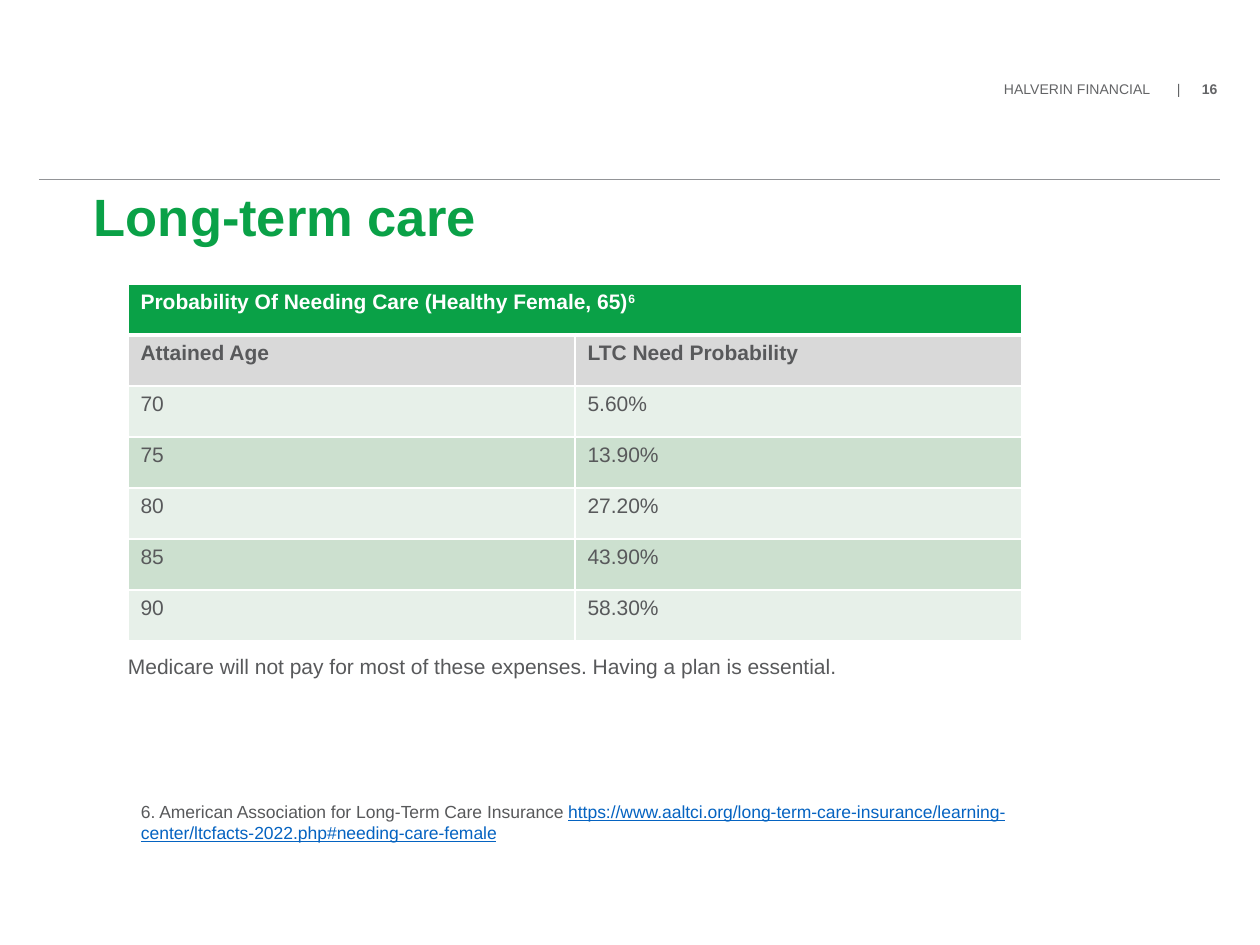
from lxml.etree import SubElement as Sub
from pptx import Presentation as Deck
from pptx.dml.color import RGBColor as RGB
from pptx.enum.shapes import MSO_CONNECTOR as Link
from pptx.oxml.ns import qn
from pptx.util import Emu, Pt

GREEN = RGB(0x0A, 0xA1, 0x47)
MINT = RGB(0xE7, 0xF0, 0xE9)
SAGE = RGB(0xCC, 0xE0, 0xCF)
SILVER = RGB(0xD9, 0xD9, 0xD9)
WHITE = RGB(0xFF, 0xFF, 0xFF)
INK = RGB(0x58, 0x59, 0x5B)
GREY = RGB(0x63, 0x64, 0x66)
RULE = RGB(0x92, 0x94, 0x97)
BLUE = RGB(0x05, 0x63, 0xC1)

ROWS = [
    ("Attained Age", "LTC Need Probability"),
    ("70", "5.60%"),
    ("75", "13.90%"),
    ("80", "27.20%"),
    ("85", "43.90%"),
    ("90", "58.30%"),
]


def px(n):
    """Turn pixels into EMU."""
    return Emu(round(n * 914400 / 126))


def style(par, size, color, bold=False):
    """Set the font of a whole paragraph."""
    font = par.font
    font.name, font.size, font.bold = "Arial", Pt(size), bold
    font.color.rgb = color


def add_text(slide, box, text, size, color, bold=False, pad=(0, 0)):
    """Add a wrapped text box and return its paragraph."""
    frame = slide.shapes.add_textbox(*map(px, box)).text_frame
    frame.word_wrap = True
    frame.margin_left = frame.margin_right = px(pad[0])
    frame.margin_top = frame.margin_bottom = px(pad[1])
    par = frame.paragraphs[0]
    par.text = text
    style(par, size, color, bold)
    return par


def add_head(slide, box):
    """Place the firm name, page number and rule across the top."""
    left, top, width, height = box
    par = add_text(slide, (left + 965, top, width - 965, 19), "", 8, GREY)
    tabs = Sub(par._p.get_or_add_pPr(), qn("a:tabLst"))
    for stop in (173, 198):
        Sub(tabs, qn("a:tab"), pos=str(px(stop)), algn="l")
    style(par, 8, GREY)
    par.add_run().text = "HALVERIN FINANCIAL\t|\t"
    page = par.add_run()
    page.text = "16"
    page.font.bold = True
    ends = (left, top + height, left + width, top + height)
    line = slide.shapes.add_connector(Link.STRAIGHT, *map(px, ends))
    line.line.color.rgb = RULE
    line.line.width = Pt(0.5)
    Sub(line._element.spPr, qn("a:effectLst"))


def edge(cell, **wide):
    """Draw white borders, one point wide unless given."""
    props = cell._tc.get_or_add_tcPr()
    for side in "LRTB":
        line = Sub(props, qn("a:ln" + side), w=str(Pt(wide.get(side, 1))))
        fill = Sub(line, qn("a:solidFill"))
        Sub(fill, qn("a:srgbClr"), val=str(WHITE))


def fill_cell(cell, text, back, color, bold, **wide):
    """Give a cell its borders, fill and text."""
    edge(cell, **wide)
    cell.fill.solid()
    cell.fill.fore_color.rgb = back
    par = cell.text_frame.paragraphs[0]
    par.text = text
    style(par, 12, color, bold)
    return par


def add_grid(slide, box):
    """Place the table of care odds by age."""
    count = len(ROWS) + 1
    grid = slide.shapes.add_table(count, 2, *map(px, box)).table
    for row in grid.rows:
        row.height = px(box[3] // count)
    top = grid.cell(0, 0)
    top.merge(grid.cell(0, 1))
    title = "Probability Of Needing Care (Healthy Female, 65)"
    par = fill_cell(top, title, GREEN, WHITE, True, B=3)
    edge(grid.cell(0, 1), B=3)
    note = par.add_run()
    note.text = "6"
    note._r.get_or_add_rPr().set("baseline", "30000")
    for i, row in enumerate(ROWS):
        back = SILVER if i == 0 else MINT if i % 2 else SAGE
        for j, text in enumerate(row):
            cell = grid.cell(i + 1, j)
            fill_cell(cell, text, back, INK, i == 0, T=1 if i else 3)


def add_note(slide, box):
    """Place the source note with its web address."""
    text = "6. American Association for Long-Term Care Insurance "
    par = add_text(slide, box, text, 10, INK, pad=(13, 6))
    site = par.add_run()
    site.text = (
        "https://www.aaltci.org/long-term-care-insurance/"
        "learning-center/ltcfacts-2022.php#needing-care-female"
    )
    site.font.color.rgb = BLUE
    site.font.underline = True


def main():
    """Build and save the slide."""
    deck = Deck()
    deck.slide_width, deck.slide_height = px(1260), px(945)
    slide = deck.slides.add_slide(deck.slide_layouts[6])
    add_head(slide, (39, 81, 1181, 98))
    title = add_text(slide, (94, 193, 1071, 132), "Long-term care", 30, GREEN, True)
    title.line_spacing = Pt(31)
    add_grid(slide, (128, 284, 894, 357))
    plea = "Medicare will not pay for most of these expenses. Having a plan is essential."
    add_text(slide, (128, 654, 1071, 54), plea, 12, INK)
    add_note(slide, (128, 795, 922, 93))
    deck.save("out.pptx")


if __name__ == "__main__":
    main()
